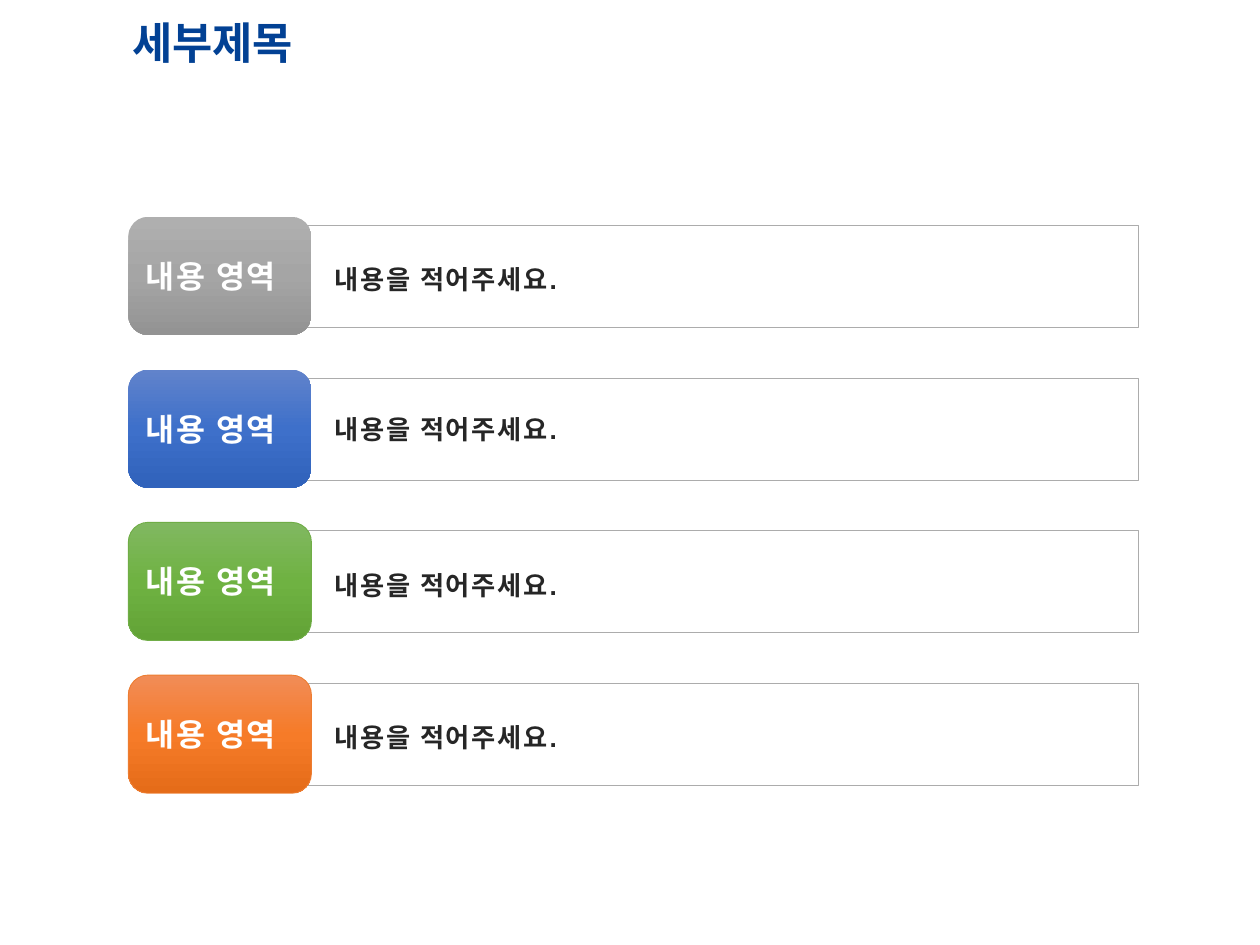
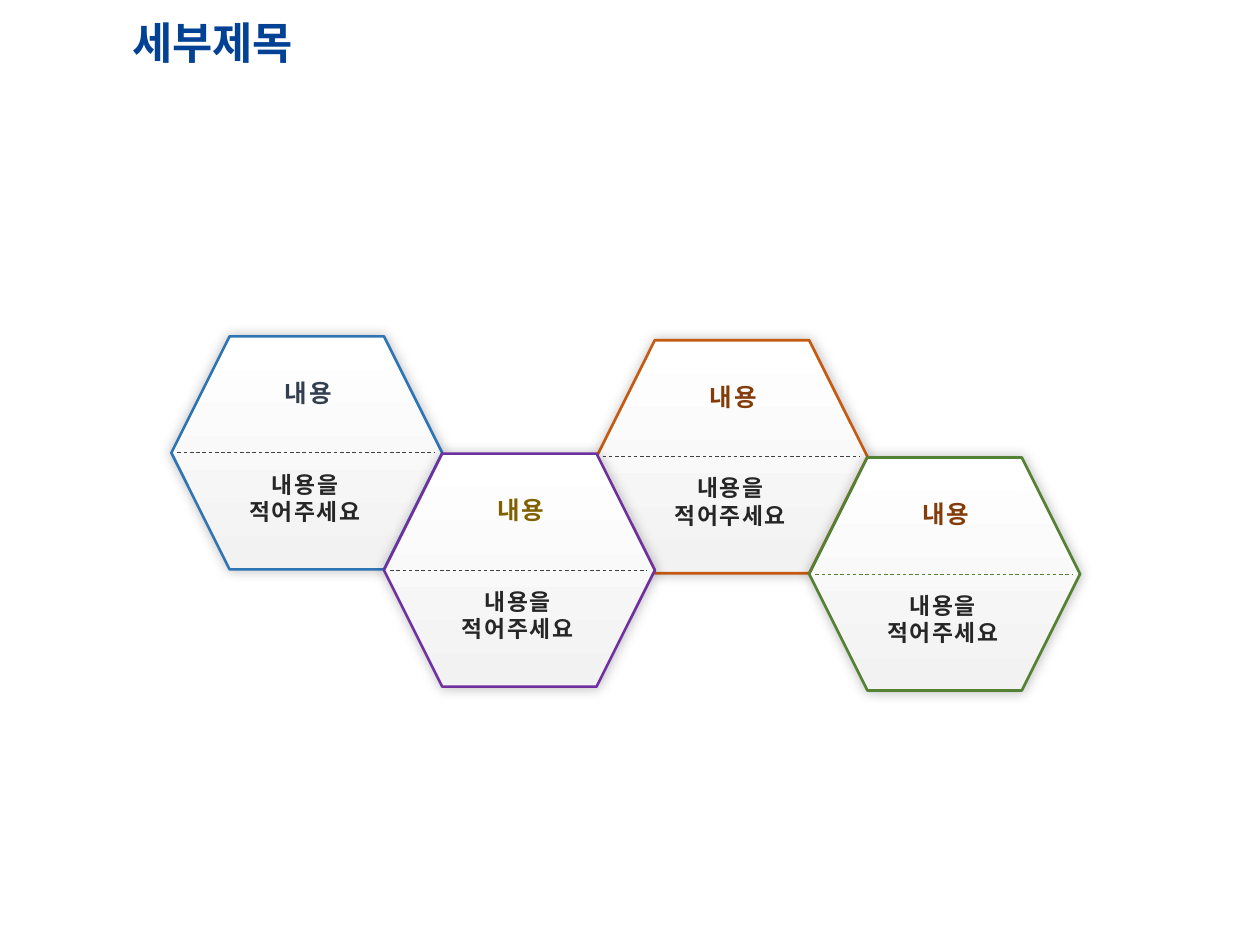
"""Build two Korean content slides: a labelled list and a hexagon chain."""
from lxml import etree
from pptx import Presentation
from pptx.dml.color import RGBColor
from pptx.enum.dml import MSO_LINE
from pptx.enum.shapes import MSO_CONNECTOR, MSO_SHAPE
from pptx.enum.text import MSO_ANCHOR, MSO_AUTO_SIZE, PP_ALIGN
from pptx.oxml.ns import qn
from pptx.util import Pt

RECT, ROUND, HEX = MSO_SHAPE.RECTANGLE, MSO_SHAPE.ROUNDED_RECTANGLE, MSO_SHAPE.HEXAGON
LEFT, CENTER, MIDDLE = PP_ALIGN.LEFT, PP_ALIGN.CENTER, MSO_ANCHOR.MIDDLE
STRAIGHT, DASH, GROW = MSO_CONNECTOR.STRAIGHT, MSO_LINE.DASH, MSO_AUTO_SIZE.SHAPE_TO_FIT_TEXT

COLORS = {
    "title": "024194", "white": "FFFFFF", "ink": "262626", "frame": "ACACAC",
    "dash": "404040", "shade": "F2F2F2", "shadow": "000000",
    "green": "70AD47", "orange": "ED7D31",
    "blue rim": "2E75B6", "violet rim": "7030A0", "rust rim": "C55A11", "green rim": "548235",
    "navy": "333F50", "olive": "806000", "brown": "843C0B",
}
TITLE = "세부제목"

ROWS = [
    ("내용 영역", "내용을 적어주세요.", ("AFAFAF", "A5A5A5", "939393"), None, 23),
    ("내용 영역", "내용을 적어주세요.", ("6183CB", "3E70CA", "3062BB"), None, 21.5),
    ("내용 영역", "내용을 적어주세요.", ("81B861", "6FB242", "62A336"), "green", 23),
    ("내용 영역", "내용을 적어주세요.", ("F18C57", "F67B28", "E56C19"), "orange", 23),
]
CELLS = [
    ("내용", "내용을\n적어주세요", "blue rim", "navy", "dash"),
    ("내용", "내용을\n적어주세요", "violet rim", "olive", "dash"),
    ("내용", "내용을\n적어주세요", "rust rim", "brown", "dash"),
    ("내용", "내용을\n적어주세요", "green rim", "brown", "green rim"),
]
STACK = (2, 0, 1, 3)
ROW_TOP, ROW_STEP = 123.9, 87.3
CELL_LEFT, CELL_STEP, CELL_TOP = 97.9, 121.5, 192.2
CELL_WIDE, CELL_HIGH = 154.8, 133.2


def rgb(name):
    return RGBColor.from_string(COLORS[name])


def style(line, name, width):
    line.color.rgb = rgb(name)
    line.width = Pt(width)


def add_box(shapes, kind, box, rim=None, width=0.5):
    shape = shapes.add_shape(kind, *map(Pt, box))
    shape.shadow.inherit = False
    if rim:
        style(shape.line, rim, width)
    else:
        shape.line.fill.background()
    return shape


def shade(shape, stops):
    shape.fill.gradient()
    shape.fill.gradient_angle = 270
    bag = shape._element.spPr.find(qn("a:gradFill")).find(qn("a:gsLst"))
    for old in list(bag):
        bag.remove(old)
    for i, tone in enumerate(stops):
        stop = etree.SubElement(bag, qn("a:gs"), pos=str(100000 * i // (len(stops) - 1)))
        etree.SubElement(stop, qn("a:srgbClr"), val=tone)


def glow(shape):
    effects = shape._element.spPr.find(qn("a:effectLst"))
    outer = etree.SubElement(effects, qn("a:outerShdw"), blurRad=str(Pt(7)), dist="0", dir="0",
                             algn="ctr", rotWithShape="0")
    tone = etree.SubElement(outer, qn("a:srgbClr"), val=COLORS["shadow"])
    etree.SubElement(tone, qn("a:alpha"), val="25000")


def add_text(slide, text, box, size, color, align=LEFT, wrap=True, lead=None):
    item = slide.shapes.add_textbox(*map(Pt, box))
    frame = item.text_frame
    frame.text = text
    frame.word_wrap = wrap
    frame.auto_size = GROW
    for para in frame.paragraphs:
        para.alignment = align
        if lead:
            para.line_spacing = Pt(lead)
        for run in para.runs:
            paint(run, "Arial", size, color)
            run._r.get_or_add_rPr().set("spc", "100")


def paint(run, face, size, color):
    font = run.font
    font.name, font.size, font.bold = face, Pt(size), True
    font.color.rgb = rgb(color)


def add_slide(deck):
    slide = deck.slides.add_slide(deck.slide_layouts[5])
    title = slide.shapes.title
    title.left, title.top, title.width, title.height = map(Pt, (68.4, -5, 620.6, 61.9))
    title.text_frame.text = TITLE
    title.text_frame.vertical_anchor = MIDDLE
    para = title.text_frame.paragraphs[0]
    para.alignment, para.line_spacing = LEFT, 0.9
    paint(para.runs[0], "Calibri", 25, "title")
    return slide


def add_row(slide, i, label, text, stops, rim, drop):
    top = ROW_TOP + i * ROW_STEP
    group = slide.shapes.add_group_shape().shapes
    frame = add_box(group, RECT, (138.2, top + 4.9, 512.6, 58.3), "frame")
    frame.fill.solid()
    frame.fill.fore_color.rgb = rgb("white")
    shade(add_box(group, ROUND, (73.4, top, 104.6, 67.5), rim), stops)
    add_text(slide, label, (76.3, top + 19.3, 98.6, 29), 18, "white", wrap=False)
    add_text(slide, text, (184.3, top + drop, 465.8, 25.4), 15, "ink")


def add_cell(slide, i, head, text, rim, color, dash):
    left = CELL_LEFT + i * CELL_STEP
    top = CELL_TOP + i % 2 * 67 + i // 2 * 2.2
    group = slide.shapes.add_group_shape().shapes
    cell = add_box(group, HEX, (left, top, CELL_WIDE, CELL_HIGH), rim, 1.5)
    shade(cell, (COLORS["white"], COLORS["shade"]))
    glow(cell)
    mid = top + CELL_HIGH / 2
    rule = group.add_connector(STRAIGHT, *map(Pt, (left + 3.5, mid, left + 150.5, mid)))
    style(rule.line, dash, 0.5)
    rule.line.dash_style = DASH
    etree.SubElement(rule._element.spPr, qn("a:effectLst"))
    add_text(slide, head, (left + 16.3, top + 19, 123.8, 25.2), 14, color, CENTER, lead=18)
    add_text(slide, text, (left + 20.5, top + 73, 111.6, 38.9), 13, "ink", CENTER)


def main():
    deck = Presentation()
    deck.slide_width, deck.slide_height = Pt(720), Pt(540)
    slide = add_slide(deck)
    for i, row in enumerate(ROWS):
        add_row(slide, i, *row)
    slide = add_slide(deck)
    for i in STACK:
        add_cell(slide, i, *CELLS[i])
    deck.save("out.pptx")


if __name__ == "__main__":
    main()
